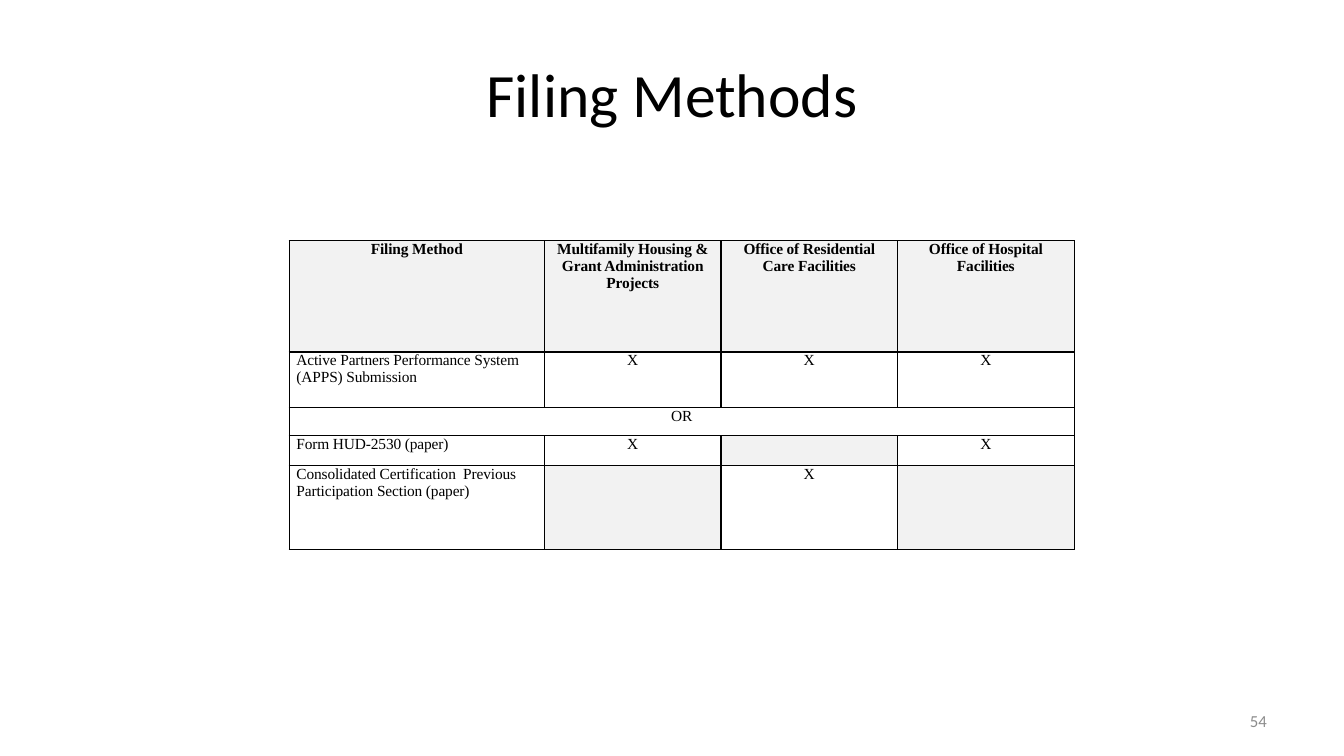
"""Build the Filing Methods slide."""
from dataclasses import dataclass

from lxml import etree
from pptx import Presentation
from pptx import util as u
from pptx.dml.color import RGBColor
from pptx.enum import text as t
from pptx.oxml import ns


@dataclass(frozen=True)
class Theme:
    ink: str = "000000"
    shade: str = "F2F2F2"
    gray: str = "8C8C8C"
    sans: str = "Calibri"
    serif: str = "Times New Roman"
    head: float = 44
    body: float = 11
    foot: float = 12


@dataclass(frozen=True)
class Box:
    x: float
    y: float
    w: float
    h: float

    def place(self) -> tuple[u.Length, ...]:
        return tuple(u.Cm(v) for v in (self.x, self.y, self.w, self.h))


@dataclass(frozen=True)
class Row:
    high: float
    cells: tuple[str, ...]
    head: bool = False
    span: bool = False


LOOK = Theme()
TITLE = Box(1.7, 0.76, 30.48, 3.18)
GRID = Box(7.29, 6.07, 19.78, 7.77)
PAGE = Box(24.28, 17.65, 7.9, 1.02)
COLS = (6.43, 4.45, 4.45, 4.45)
ROWS = (
    Row(2.8, ("Filing Method", "Multifamily Housing & Grant Administration Projects",
              "Office of Residential Care Facilities", "Office of Hospital Facilities"), head=True),
    Row(1.4, ("Active Partners Performance System (APPS) Submission", "X", "X", "X")),
    Row(0.71, ("OR", "", "", ""), span=True),
    Row(0.76, ("Form HUD-2530 (paper)", "X", "", "X")),
    Row(2.1, ("Consolidated Certification  Previous Participation Section (paper)", "", "X", "")),
)


def write(frame, words: str, *, font: str, size: float, color: str = LOOK.ink,
          bold: bool = False, align=t.PP_ALIGN.CENTER, track: int = 0) -> None:
    para = frame.paragraphs[0]
    para.alignment = align
    if not words:
        etree.SubElement(para._p, ns.qn("a:endParaRPr"), sz=str(int(size * 100)))
        return
    run = para.add_run()
    run.text = words
    run.font.name = font
    run.font.size = u.Pt(size)
    run.font.bold = bold
    run.font.color.rgb = RGBColor.from_string(color)
    if track:
        run.font._element.set("spc", str(track))


def edge(cell) -> None:
    props = cell._tc.get_or_add_tcPr()
    for side in ("lnL", "lnR", "lnT", "lnB"):
        line = etree.SubElement(props, ns.qn(f"a:{side}"), w=str(u.Pt(1)))
        fill = etree.SubElement(line, ns.qn("a:solidFill"))
        etree.SubElement(fill, ns.qn("a:srgbClr"), val=LOOK.ink)


def style(cell, shade: bool) -> None:
    edge(cell)
    cell.margin_left = cell.margin_right = u.Cm(0.18)
    cell.margin_top = cell.margin_bottom = 0
    if shade:
        cell.fill.solid()
        cell.fill.fore_color.rgb = RGBColor.from_string(LOOK.shade)
    else:
        cell.fill.background()


def draw_grid(slide) -> None:
    grid = slide.shapes.add_table(len(ROWS), len(COLS), *GRID.place()).table
    grid.first_row = grid.horz_banding = False
    for col, wide in zip(grid.columns, COLS):
        col.width = u.Cm(wide)
    for r, row in enumerate(ROWS):
        grid.rows[r].height = u.Cm(row.high)
        for c, words in enumerate(row.cells):
            cell = grid.cell(r, c)
            style(cell, row.head or not (words or row.span))
            left = c == 0 and not (row.head or row.span)
            write(cell.text_frame, words, font=LOOK.serif, size=LOOK.body, bold=row.head,
                  align=t.PP_ALIGN.LEFT if left else t.PP_ALIGN.CENTER, track=-10)
        if row.span:
            grid.cell(r, 0).merge(grid.cell(r, len(COLS) - 1))


def draw_title(slide) -> None:
    title = slide.shapes.title
    title.left, title.top, title.width, title.height = TITLE.place()
    title.text_frame.vertical_anchor = t.MSO_ANCHOR.MIDDLE
    write(title.text_frame, "Filing Methods", font=LOOK.sans, size=LOOK.head)


def draw_page(slide) -> None:
    frame = slide.shapes.add_textbox(*PAGE.place()).text_frame
    frame.word_wrap = True
    frame.vertical_anchor = t.MSO_ANCHOR.MIDDLE
    write(frame, "54", font=LOOK.sans, size=LOOK.foot, color=LOOK.gray, align=t.PP_ALIGN.RIGHT)


def main() -> None:
    deck = Presentation()
    deck.slide_width, deck.slide_height = u.Cm(33.87), u.Cm(19.05)
    slide = deck.slides.add_slide(deck.slide_layouts[5])
    draw_title(slide)
    draw_grid(slide)
    draw_page(slide)
    deck.save("out.pptx")


if __name__ == "__main__":
    main()
